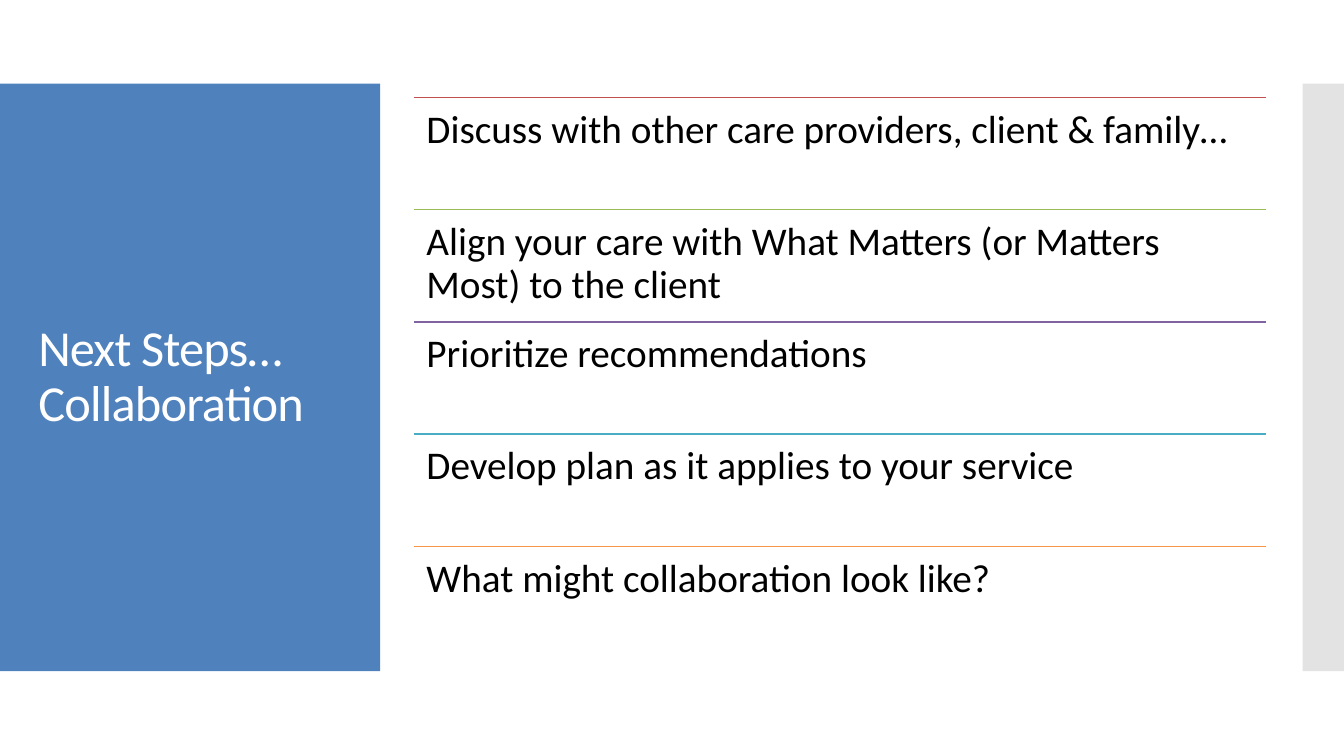
from dataclasses import dataclass

from lxml import etree
from pptx import Presentation
from pptx.dml.color import RGBColor
from pptx.enum.shapes import MSO_CONNECTOR, MSO_SHAPE
from pptx.enum.text import MSO_ANCHOR, MSO_AUTO_SIZE, PP_ALIGN
from pptx.oxml.ns import qn
from pptx.util import Inches, Pt

RECTANGLE = MSO_SHAPE.RECTANGLE
STRAIGHT = MSO_CONNECTOR.STRAIGHT
TOP, MIDDLE = MSO_ANCHOR.TOP, MSO_ANCHOR.MIDDLE
NO_AUTOFIT = MSO_AUTO_SIZE.NONE
LEFT = PP_ALIGN.LEFT


@dataclass(frozen=True)
class Theme:
    font: str = "Calibri"
    title_size: int = 36
    step_size: int = 28
    title_color: str = "FFFFFF"
    step_color: str = "000000"
    title_panel: str = "4F81BD"
    edge_panel: str = "C8C8C8"
    rules: tuple = ("C0504D", "9BBB59", "8064A2", "4BACC6", "F79646")


THEME = Theme()


def write_text(frame, text, *, size, color, anchor=TOP, inset=0.1, after=0, spacing=0):
    frame.word_wrap = True
    frame.auto_size = NO_AUTOFIT
    frame.vertical_anchor = anchor
    frame.margin_left = frame.margin_right = Inches(inset)
    frame.margin_top = frame.margin_bottom = Inches(inset)
    frame.text = text
    paragraph = frame.paragraphs[0]
    paragraph.alignment = LEFT
    paragraph.line_spacing = 0.9
    paragraph.space_after = Pt(after)
    for run in paragraph.runs:
        run.font.name = THEME.font
        run.font.size = Pt(size)
        run.font.color.rgb = RGBColor.from_string(color)
        run.font._element.set("spc", str(round(spacing * 100)))


def add_panel(left, width, color):
    panel = slide.shapes.add_shape(
        RECTANGLE, Inches(left), Inches(0.83), Inches(width), Inches(5.83))
    panel.shadow.inherit = False
    panel.fill.solid()
    panel.fill.fore_color.rgb = RGBColor.from_string(color)
    panel.line.fill.background()
    return panel


presentation = Presentation()
presentation.slide_width = Inches(13.33)
presentation.slide_height = Inches(7.5)
slide = presentation.slides.add_slide(presentation.slide_layouts[5])

# Side panels, the right one half transparent
title_panel = add_panel(0, 3.77, THEME.title_panel)
edge_panel = add_panel(12.92, 0.41, THEME.edge_panel)
edge_color = edge_panel.element.spPr.find(f"{qn('a:solidFill')}/{qn('a:srgbClr')}")
etree.SubElement(edge_color, qn("a:alpha"), val="50000")

# Title, in front of the panels
title = slide.shapes.title
title.left, title.top = Inches(0.28), Inches(1.23)
title.width, title.height = Inches(3.22), Inches(5.03)
write_text(title.text_frame, "Next Steps…\vCollaboration", size=THEME.title_size,
           color=THEME.title_color, anchor=MIDDLE, spacing=-0.6)
for panel in (title_panel, edge_panel):
    title.element.addprevious(panel.element)

# Steps, each under a coloured rule
STEPS = (
    "Discuss with other care providers, client & family…",
    "Align your care with What Matters (or Matters Most) to the client",
    "Prioritize recommendations",
    "Develop plan as it applies to your service",
    "What might collaboration look like?",
)
steps_left, steps_top, steps_width = Inches(4.11), Inches(0.97), Inches(8.45)
step_height = Inches(5.56) // len(STEPS)

for index, (step, rule_color) in enumerate(zip(STEPS, THEME.rules)):
    step_top = steps_top + index * step_height
    rule = slide.shapes.add_connector(
        STRAIGHT, steps_left, step_top, steps_left + steps_width, step_top)
    rule.line.color.rgb = RGBColor.from_string(rule_color)
    rule.line.width = Pt(0.85)
    etree.SubElement(rule.element.spPr, qn("a:effectLst"))

    step_box = slide.shapes.add_textbox(steps_left, step_top, steps_width, step_height)
    write_text(step_box.text_frame, step, size=THEME.step_size,
               color=THEME.step_color, inset=0.12, after=10)

presentation.save("out.pptx")
